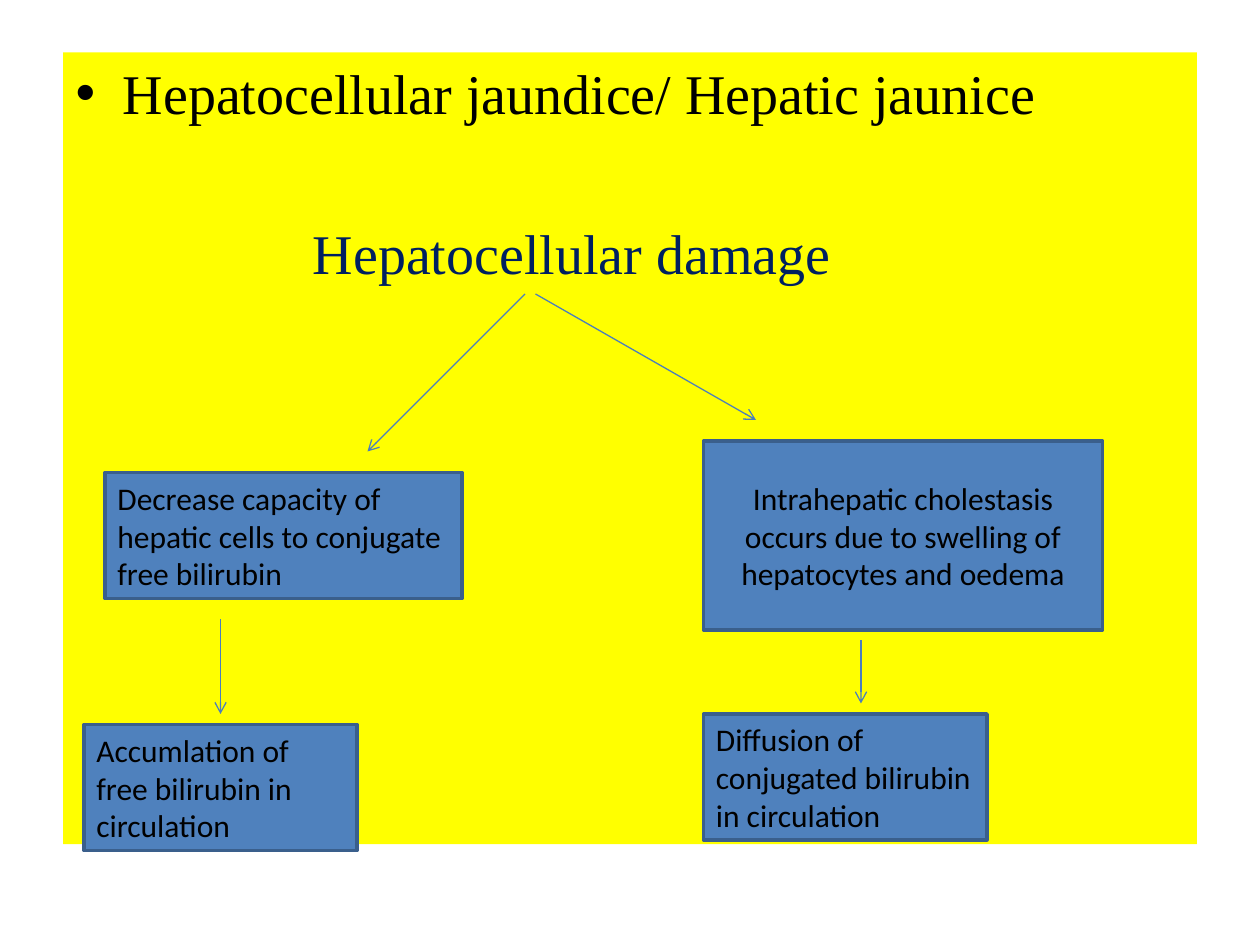
from lxml import etree
from pptx import Presentation
from pptx.dml.color import RGBColor
from pptx.enum.shapes import MSO_CONNECTOR, MSO_SHAPE
from pptx.enum.text import MSO_ANCHOR, MSO_AUTO_SIZE, PP_ALIGN
from pptx.oxml.ns import qn
from pptx.util import Pt

EMU_PER_PX = 7620  # 120 px to the inch
YELLOW = RGBColor(0xFF, 0xFF, 0x00)
BLUE = RGBColor(0x4F, 0x81, 0xBD)
BOX_EDGE = RGBColor(0x3A, 0x5F, 0x8C)
ARROW_BLUE = RGBColor(0x4B, 0x7E, 0xBC)
NAVY = RGBColor(0x00, 0x20, 0x60)
BLACK = RGBColor(0x00, 0x00, 0x00)
RECTANGLE = MSO_SHAPE.RECTANGLE
STRAIGHT = MSO_CONNECTOR.STRAIGHT
LEFT, CENTER = PP_ALIGN.LEFT, PP_ALIGN.CENTER
MIDDLE = MSO_ANCHOR.MIDDLE
NO_AUTOFIT = MSO_AUTO_SIZE.NONE


def px(*lengths):
    return [length * EMU_PER_PX for length in lengths]


class SlideBuilder:
    heading_font, heading_size = "Times New Roman", 32
    box_font, box_size = "Calibri", 18

    def __init__(self, slide):
        self.slide = slide

    def add_run(self, paragraph, text, font, size, color):
        run = paragraph.add_run()
        run.text = text
        run.font.name = font
        run.font.size = Pt(size)
        run.font.color.rgb = color

    def fill_body(self, bounds, heading, subheading, indent, gap):
        body = self.slide.placeholders[1]
        body.left, body.top, body.width, body.height = px(*bounds)
        body.fill.solid()
        body.fill.fore_color.rgb = YELLOW
        frame = body.text_frame
        frame.auto_size = NO_AUTOFIT
        self.add_run(frame.paragraphs[0], heading,
                     self.heading_font, self.heading_size, BLACK)
        # The subheading is indented and has no bullet
        paragraph = frame.add_paragraph()
        paragraph.space_before = Pt(gap)
        properties = paragraph._p.get_or_add_pPr()
        properties.set("marL", str(indent * EMU_PER_PX))
        properties.set("indent", "0")
        etree.SubElement(properties, qn("a:buNone"))
        self.add_run(paragraph, subheading,
                     self.heading_font, self.heading_size, NAVY)

    def box(self, bounds, text, align=LEFT):
        shape = self.slide.shapes.add_shape(RECTANGLE, *px(*bounds))
        shape.shadow.inherit = False
        shape.fill.solid()
        shape.fill.fore_color.rgb = BLUE
        shape.line.color.rgb = BOX_EDGE
        shape.line.width = Pt(2)
        frame = shape.text_frame
        frame.word_wrap = True
        frame.vertical_anchor = MIDDLE
        paragraph = frame.paragraphs[0]
        paragraph.alignment = align
        self.add_run(paragraph, text, self.box_font, self.box_size, BLACK)

    def arrow(self, start, end):
        connector = self.slide.shapes.add_connector(STRAIGHT, *px(*start, *end))
        connector.line.color.rgb = ARROW_BLUE
        connector.line.width = Pt(0.75)
        etree.SubElement(connector.line._get_or_add_ln(), qn("a:tailEnd"), type="arrow")
        etree.SubElement(connector._element.spPr, qn("a:effectLst"))


def main():
    presentation = Presentation()
    presentation.slide_width, presentation.slide_height = px(1200, 900)
    slide = presentation.slides.add_slide(presentation.slide_layouts[1])
    title = slide.shapes.title._element
    title.getparent().remove(title)
    builder = SlideBuilder(slide)

    # Yellow panel with the headings
    builder.fill_body((60, 50, 1080, 754), "Hepatocellular jaundice/ Hepatic jaunice",
                      "Hepatocellular damage", indent=226, gap=53)

    # Effects of the damage
    builder.box((100, 450, 340, 120),
                "Decrease capacity of hepatic cells to conjugate free bilirubin")
    builder.box((670, 420, 380, 180),
                "Intrahepatic cholestasis occurs due to swelling of hepatocytes and oedema",
                CENTER)
    builder.box((80, 690, 260, 120), "Accumlation of free bilirubin in circulation")
    builder.box((670, 680, 270, 120), "Diffusion of conjugated bilirubin in circulation")

    # Arrows from cause to effect
    for start, end in [((500, 280), (350, 430)), ((510, 280), (720, 400)),
                       ((210, 590), (210, 680)), ((820, 610), (820, 670))]:
        builder.arrow(start, end)

    presentation.save("out.pptx")


if __name__ == "__main__":
    main()
